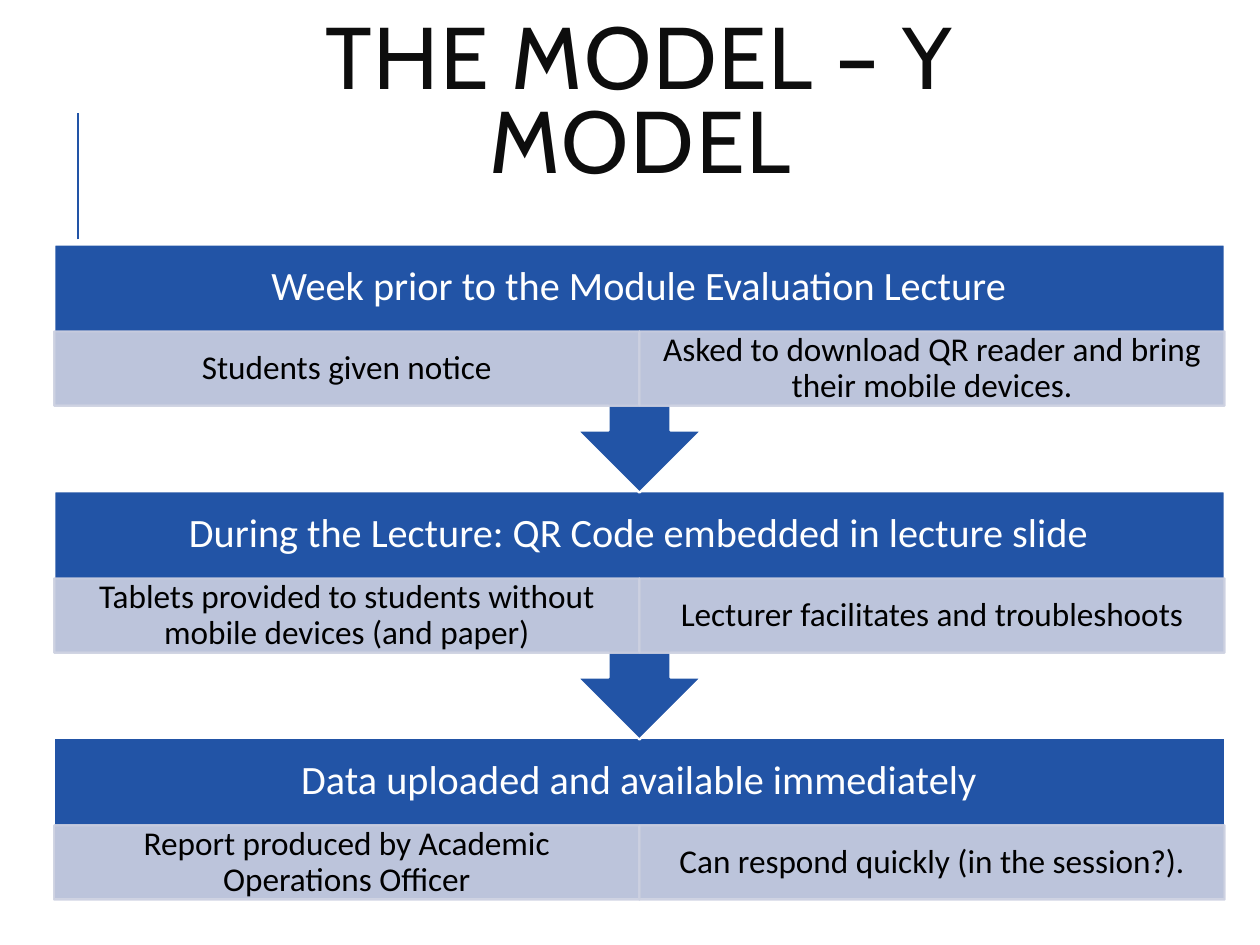
import pptx
import pptx.dml.color
import pptx.enum.shapes
import pptx.enum.text
import pptx.oxml.ns
import pptx.util
from lxml import etree

Inches = pptx.util.Inches
Pt = pptx.util.Pt
Shape = pptx.enum.shapes.MSO_SHAPE

COLOURS = {
    "blue": "2254A6",
    "pale": "CDD1E1",
    "white": "FFFFFF",
    "black": "000000",
    "title": "0D0D0D",
}

STAGES = [
    ("Week prior to the Module Evaluation Lecture",
     ["Students given notice",
      "Asked to download QR reader and bring their mobile devices."]),
    ("During the Lecture: QR Code embedded in lecture slide",
     ["Tablets provided to students without mobile devices (and paper)",
      "Lecturer facilitates and troubleshoots"]),
    ("Data uploaded and available immediately",
     ["Report produced by Academic Operations Officer",
      "Can respond quickly (in the session?)."]),
]

LEFT, TOP, WIDTH, PITCH = 0.43, 1.94, 9.29, 1.96
HEADER_HEIGHT, CELL_HEIGHT, CALLOUT_HEIGHT = 0.69, 0.59, 1.97


class SlideBuilder:
    """Holds the style and the current slide, and adds each kind of element."""

    def __init__(self, slide):
        self.slide = slide
        self.body_font = "Calibri"
        self.title_font = "Cabin"

    def colour(self, name):
        return pptx.dml.color.RGBColor.from_string(COLOURS[name])

    def add_text(self, frame, text, font, size, colour, spacing):
        frame.word_wrap = True
        frame.auto_size = pptx.enum.text.MSO_AUTO_SIZE.NONE
        frame.vertical_anchor = pptx.enum.text.MSO_ANCHOR.MIDDLE
        para = frame.paragraphs[0]
        para.alignment = pptx.enum.text.PP_ALIGN.CENTER
        para.line_spacing = spacing
        span = para.add_run()
        span.text = text
        span.font.name = font
        span.font.size = Pt(size)
        span.font.color.rgb = self.colour(colour)
        return span

    def title(self, text, left, top, width, height):
        box = self.slide.shapes.title
        box.left, box.top = Inches(left), Inches(top)
        box.width, box.height = Inches(width), Inches(height)
        span = self.add_text(box.text_frame, text, self.title_font, 50, "title", 0.8)
        span.font.bold = False
        span.font._element.set("spc", "100")

    def rule(self, x, top, bottom):
        line = self.slide.shapes.add_connector(
            pptx.enum.shapes.MSO_CONNECTOR.STRAIGHT,
            Inches(x), Inches(bottom), Inches(x), Inches(top))
        line.line.color.rgb = self.colour("blue")
        line.line.width = Pt(1.5)
        etree.SubElement(line._element.spPr, pptx.oxml.ns.qn("a:effectLst"))

    def box(self, kind, left, top, width, height, fill, line):
        box = self.slide.shapes.add_shape(
            kind, Inches(left), Inches(top), Inches(width), Inches(height))
        box.shadow.inherit = False
        box.fill.solid()
        box.fill.fore_color.rgb = self.colour(fill)
        box.line.color.rgb = self.colour(line)
        box.line.width = Pt(1.25)
        return box

    def header(self, kind, text, top, height):
        box = self.box(kind, LEFT, top, WIDTH, height, "blue", "white")
        frame = box.text_frame
        frame.margin_left = frame.margin_right = Inches(0.18)
        frame.margin_top = Inches(0.05)
        frame.margin_bottom = Inches(CELL_HEIGHT + 0.05)
        self.add_text(frame, text, self.body_font, 23, "white", 0.9)

    def cell(self, text, left, top, width):
        box = self.box(Shape.RECTANGLE, left, top, width, CELL_HEIGHT, "pale", "pale")
        for tint in box._element.spPr.iter(pptx.oxml.ns.qn("a:srgbClr")):
            etree.SubElement(tint, pptx.oxml.ns.qn("a:alpha"), val="90000")
        frame = box.text_frame
        frame.margin_left = frame.margin_right = Inches(0.15)
        frame.margin_top = frame.margin_bottom = Inches(0.03)
        self.add_text(frame, text, self.body_font, 19, "black", 0.9)

    def stage(self, heading, details, top, is_last):
        if is_last:
            self.header(Shape.RECTANGLE, heading, top, HEADER_HEIGHT + CELL_HEIGHT)
        else:
            self.header(Shape.DOWN_ARROW_CALLOUT, heading, top, CALLOUT_HEIGHT)
        width = WIDTH / len(details)
        for column, detail in enumerate(details):
            self.cell(detail, LEFT + column * width, top + HEADER_HEIGHT, width)


def main():
    deck = pptx.Presentation()
    deck.slide_width, deck.slide_height = Inches(10), Inches(7.5)
    page = SlideBuilder(deck.slides.add_slide(deck.slide_layouts[5]))
    page.rule(0.62, 0.9, 1.9)
    page.title("THE MODEL – Y MODEL", 1.22, 0.29, 7.72, 1.1)
    last = len(STAGES) - 1
    for row, (heading, details) in reversed(list(enumerate(STAGES))):
        page.stage(heading, details, TOP + row * PITCH, row == last)
    deck.save("out.pptx")


if __name__ == "__main__":
    main()
